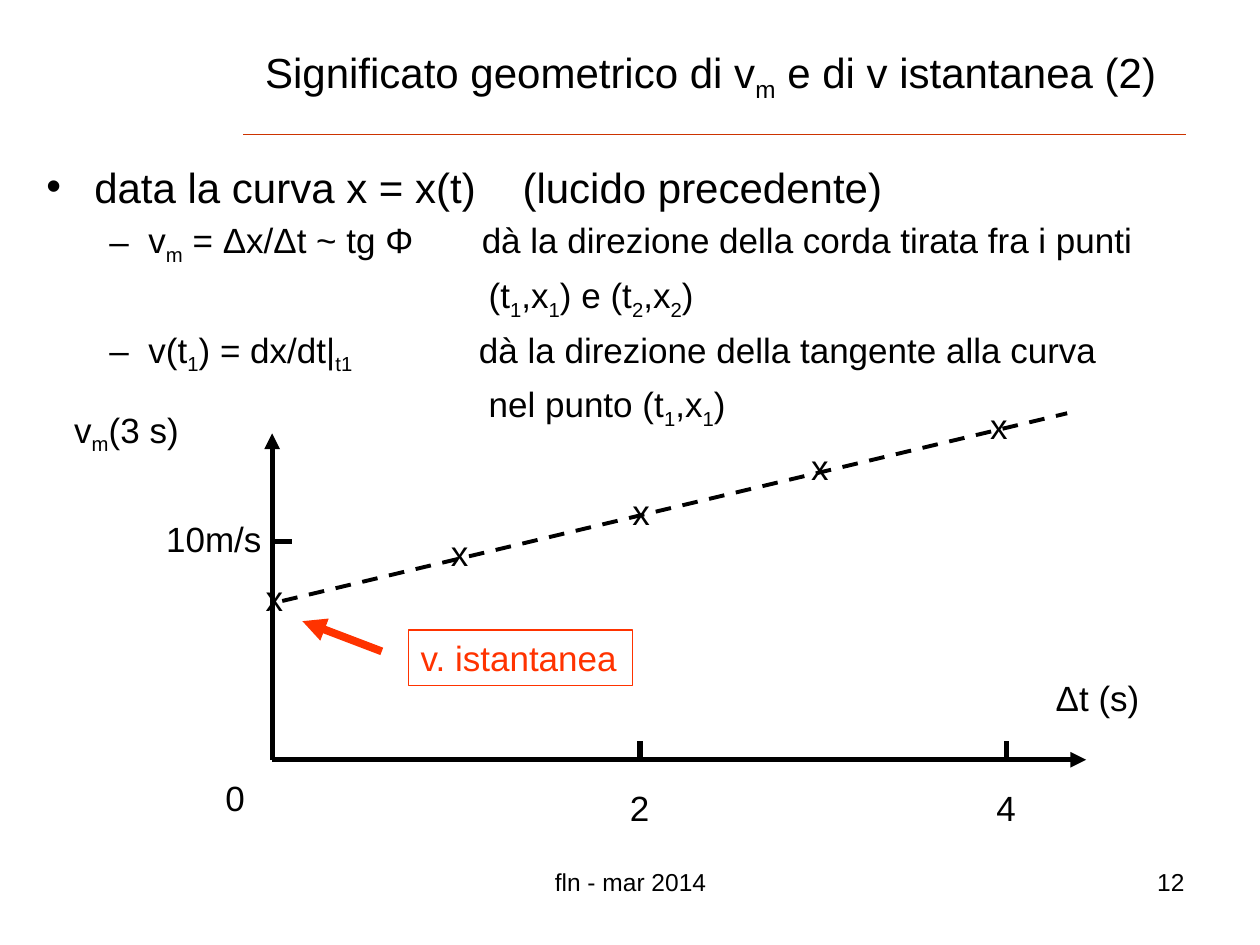
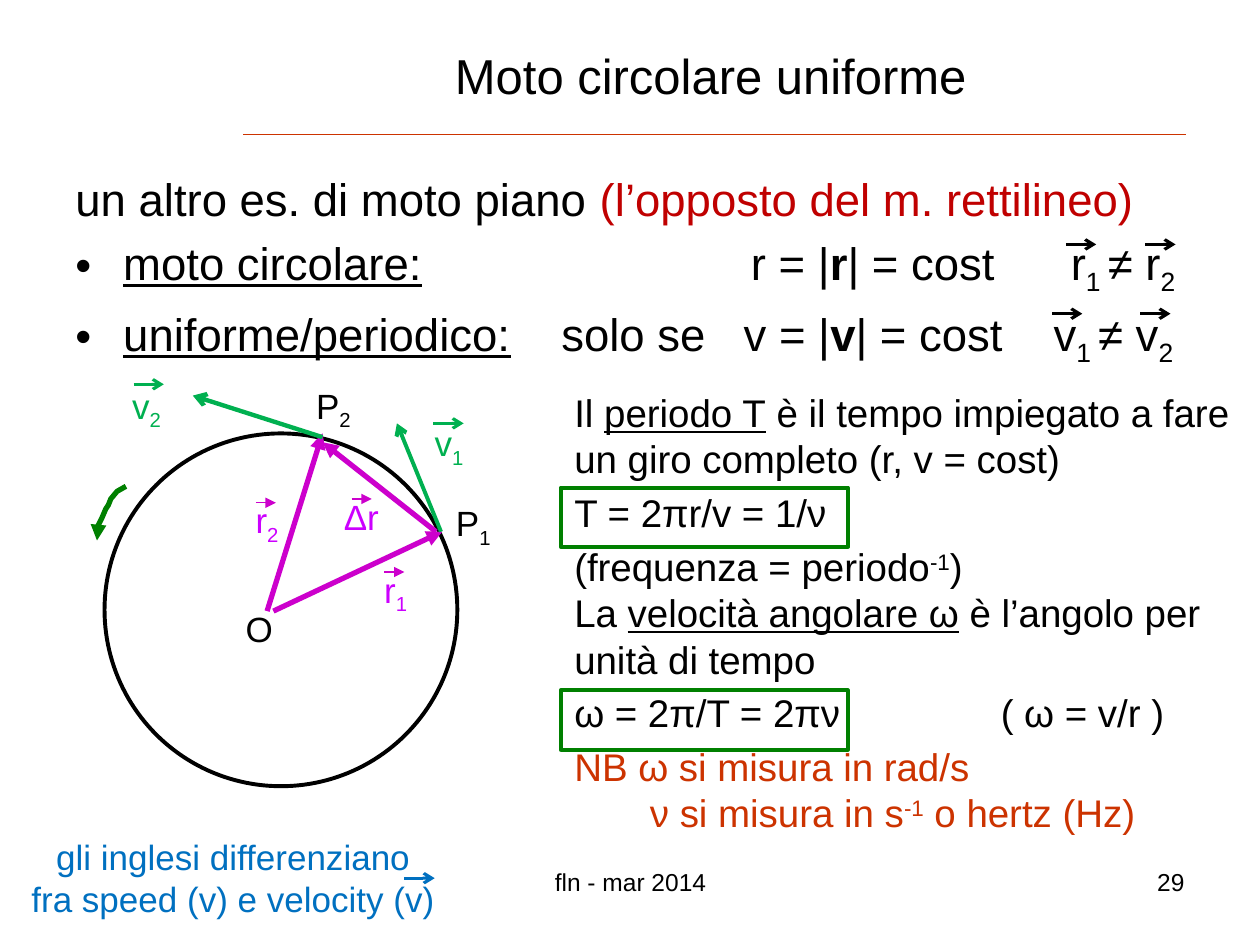
from dataclasses import dataclass
from lxml import etree
from pptx import Presentation
from pptx.dml.color import RGBColor
from pptx.enum.dml import MSO_LINE
from pptx.enum.shapes import MSO_CONNECTOR, MSO_SHAPE
from pptx.enum.text import MSO_ANCHOR, MSO_AUTO_SIZE, PP_ALIGN
from pptx.oxml.ns import qn
from pptx.util import Inches, Pt

LEFT, MID, RIGHT = PP_ALIGN.LEFT, PP_ALIGN.CENTER, PP_ALIGN.RIGHT
TOP, CENTRE = MSO_ANCHOR.TOP, MSO_ANCHOR.MIDDLE
GROW, FIXED = MSO_AUTO_SIZE.SHAPE_TO_FIT_TEXT, MSO_AUTO_SIZE.NONE
DASH = MSO_LINE.DASH
OVAL, RECT = MSO_SHAPE.OVAL, MSO_SHAPE.RECTANGLE
STRAIGHT = MSO_CONNECTOR.STRAIGHT


@dataclass(frozen=True)
class Theme:
    font: str = "Arial"
    black: str = "000000"
    rule: str = "CC3300"
    red: str = "C00000"
    hot: str = "FF3300"
    plum: str = "CC00CC"
    pink: str = "CC00FF"
    green: str = "008000"
    leaf: str = "00B050"
    blue: str = "0070C0"
    foot: int = 14
    label: int = 20
    note: int = 22
    lead: int = 24
    body: int = 26
    head: int = 28
    space: float = 0.278  # width of a blank, in ems


T = Theme()


def apply(obj, fmt):
    for key, val in fmt.items():
        setattr(obj, key, val)


def split(text):
    """Yield (mark, words); {_x} low, {^x} high, {ux} underline,
    {*x} bold, {!x} red, {+n} a gap n blanks wide."""
    for part in text.split("{"):
        mark, end, rest = part.partition("}")
        if end:
            yield mark[0], mark[1:]
        else:
            rest = mark
        if rest:
            yield "", rest


class Deck:
    def __init__(self, style):
        self.style = style
        self.prs = Presentation()
        apply(self.prs, {"slide_width": Inches(10), "slide_height": Inches(7.5)})
        self.slide = None

    # Slide frame: title, rule and footer
    def page(self, title, size, number):
        self.slide = self.prs.slides.add_slide(self.prs.slide_layouts[5])
        head = self.slide.shapes.title
        x, y, w, h = map(Inches, (1.85, 0.28, 7.58, 0.63))
        apply(head, {"left": x, "top": y, "width": w, "height": h})
        apply(head.text_frame, {"word_wrap": True, "auto_size": FIXED,
                                "vertical_anchor": CENTRE})
        self.para(head.text_frame.paragraphs[0], title, size=size, align=MID)
        self.line((1.93, 1.07), (9.41, 1.07), self.style.rule, 0.75)
        for box, words, align in (((3.42, 6.83, 3.17, 0.52), "fln - mar 2014", MID),
                                  ((7.17, 6.83, 2.33, 0.52), number, RIGHT)):
            self.text(box, [(words, {"align": align})], size=self.style.foot)

    # Text
    def para(self, p, text, size, color=T.black, align=LEFT, bullet=None,
             left=0, hang=0, before=0, after=0):
        ppr = p._p.get_or_add_pPr()
        ppr.set("marL", str(Inches(left)))
        ppr.set("indent", str(-Inches(hang)))
        if bullet:
            etree.SubElement(ppr, qn("a:buFont")).set("typeface", self.style.font)
            etree.SubElement(ppr, qn("a:buChar")).set("char", bullet)
        apply(p, {"alignment": align, "space_before": Pt(before * size),
                  "space_after": Pt(after * size)})
        for mark, words in split(text):
            run = p.add_run()
            run.text = " " if mark == "+" else words
            apply(run.font, {"name": self.style.font, "size": Pt(size),
                             "bold": mark == "*", "underline": mark == "u"})
            tint = self.style.red if mark == "!" else color
            run.font.color.rgb = RGBColor.from_string(tint)
            rpr = run._r.get_or_add_rPr()
            if mark == "+":
                wide = (int(words) - 1) * self.style.space * size
                rpr.set("spc", str(round(wide * 100)))
            elif mark in ("_", "^"):
                rpr.set("baseline", "-25000" if mark == "_" else "30000")

    def text(self, box, rows, wrap=True, grow=False, **base):
        shape = self.slide.shapes.add_textbox(*map(Inches, box))
        frame = shape.text_frame
        apply(frame, {"word_wrap": wrap, "auto_size": GROW if grow else FIXED,
                      "vertical_anchor": TOP})
        for i, (words, fmt) in enumerate(rows):
            p = frame.add_paragraph() if i else frame.paragraphs[0]
            self.para(p, words, **{**base, **fmt})
        return shape

    def label(self, x, y, w, words, color=T.black, h=0.43):
        return self.text((x, y, w, h), [(words, {})], wrap=False, grow=True,
                         size=self.style.label, color=color)

    # Lines and outlines
    def pen(self, shape, color, width, tip=None, dash=None):
        apply(shape.line, {"width": Pt(width)})
        shape.line.color.rgb = RGBColor.from_string(color)
        if dash:
            shape.line.dash_style = dash
        if tip:
            ln = shape.line._get_or_add_ln()
            etree.SubElement(ln, qn("a:tailEnd")).set("type", tip)

    def line(self, start, end, color, width, tip=None, dash=None):
        link = self.slide.shapes.add_connector(STRAIGHT, *map(Inches, start + end))
        self.pen(link, color, width, tip, dash)
        etree.SubElement(link._element.spPr, qn("a:effectLst"))

    def arrow(self, x, y, size, color, width, tip):
        self.line((x, y), (x + size, y), color, width, tip)

    def shape(self, kind, box, color, width):
        form = self.slide.shapes.add_shape(kind, *map(Inches, box))
        form.shadow.inherit = False
        form.fill.background()
        self.pen(form, color, width)

    def curve(self, dots, color, width, tip):
        dots = [(Inches(x), Inches(y)) for x, y in dots]
        path = self.slide.shapes.build_freeform(*dots[0])
        path.add_line_segments(dots[1:], close=False)
        form = path.convert_to_shape()
        form.shadow.inherit = False
        form.fill.background()
        self.pen(form, color, width, tip)


def chord(deck):
    deck.page("Significato geometrico di v{_m} e di v istantanea (2)", T.lead, "12")

    # Bullets
    dash = {"bullet": "–", "left": 0.81, "hang": 0.31, "before": 0.2}
    more = {"left": 3.51, "before": 0.2}
    deck.text((0.27, 1.23, 9.53, 5.47), [
        ("data la curva x = x(t){+4}(lucido precedente)",
         {"size": T.lead, "bullet": "•", "left": 0.38, "hang": 0.38}),
        ("v{_m} = Δx/Δt ~ tg Φ{+7}dà la direzione della corda tirata fra i punti", dash),
        ("(t{_1},x{_1}) e (t{_2},x{_2})", more),
        ("v(t{_1}) = dx/dt|{_t1}{+13}dà la direzione della tangente alla curva", dash),
        ("nel punto (t{_1},x{_1})", more),
    ], size=T.label)

    # Axes and ticks
    zero = (2.16, 6.03)
    for end in ((2.16, 3.44), (8.62, 6.03)):
        deck.line(zero, end, T.black, 3, "triangle")
    deck.line((2.16, 4.3), (2.32, 4.3), T.black, 3)
    for x in (5.08, 7.99):
        deck.line((x, 6.03), (x, 5.88), T.black, 3)
    deck.line((2.24, 4.77), (8.47, 3.28), T.black, 2.25, dash=DASH)
    for spot in ((0.49, 3.19, 1.05, "v{_m}(3 s)"), (1.22, 4.06, 0.96, "10m/s"),
                 (1.69, 6.11, 0.36, "0"), (4.9, 6.19, 0.43, "2"),
                 (7.81, 6.19, 0.36, "4"), (8.28, 5.32, 0.92, "Δt (s)")):
        deck.label(*spot)

    # Data points
    for x, y in ((2.01, 4.53), (3.48, 4.17), (4.92, 3.84), (6.34, 3.49), (7.76, 3.16)):
        deck.label(x, y, 0.34, "x")

    # Callout
    deck.line((3.03, 5.17), (2.4, 4.93), T.hot, 4.5, "triangle")
    deck.pen(deck.label(3.24, 5, 1.78, "v. istantanea", T.hot, 0.44), T.hot, 0.75)


def circle(deck):
    deck.page("Moto circolare uniforme", T.head, "29")

    # Bullets
    dot = {"bullet": "•", "left": 0.38, "hang": 0.38, "before": 0.2}
    deck.text((0.5, 1.31, 9, 5.39), [
        ("un altro es. di moto piano {!(l’opposto del m. rettilineo)}", {}),
        ("{umoto circolare:}{+26}r = |{*r}| = cost{+6}r{_1 }≠ r{_2}", dot),
        ("{uuniforme/periodico:}{+4}solo se{+3}v = |{*v}| = cost{+4}v{_1 }≠ v{_2}", dot),
    ], size=T.body)

    # Circle and radius vectors
    deck.shape(OVAL, (0.83, 3.44, 2.8, 2.8), T.black, 2.25)
    for start, end in (((2.12, 4.85), (2.56, 3.44)), ((2.17, 4.85), (3.51, 4.22)),
                       ((3.46, 4.22), (2.56, 3.51))):
        deck.line(start, end, T.plum, 3, "triangle")
    for x, y, w, words, shift in ((1.93, 3.91, 0.44, "r{_2}", 0.1),
                                  (2.95, 4.46, 0.39, "r{_1}", 0.1),
                                  (2.63, 3.88, 0.48, "Δr", 0.16)):
        deck.label(x, y, w, words, T.pink)
        deck.arrow(x + shift, y + 0.08, 0.16, T.plum, 0.75, "triangle")
    for spot in ((1.85, 4.77, 0.42, "O"), (3.52, 3.93, 0.49, "P{_1}"),
                 (2.41, 3, 0.49, "P{_2}")):
        deck.label(*spot)
    deck.curve([(1, 3.86), (0.93, 3.9), (0.88, 3.96), (0.86, 4.01), (0.84, 4.04),
                (0.81, 4.11), (0.78, 4.17), (0.77, 4.29)], T.green, 3, "triangle")

    # Period and angular speed
    law = {"before": 0.2, "after": 0.2}
    deck.text((4.46, 3.04, 5.54, 3.73), [
        ("Il {uperiodo T} è il tempo impiegato a fare un giro completo (r, v = cost)", {}),
        ("T = 2πr/v = 1/ν", law),
        ("(frequenza = periodo{^-1})", {}),
        ("La {uvelocità angolare ω} è l’angolo per", {}),
        ("unità di tempo", {}),
        ("ω = 2π/T = 2πν{+15}( ω = v/r )", law),
        ("NB ω si misura in rad/s", {"color": T.rule}),
        ("ν si misura in s{^-1} o hertz (Hz)", {"color": T.rule, "left": 0.6}),
    ], grow=True, size=T.note)
    for y in (3.87, 5.48):
        deck.shape(RECT, (4.45, y, 2.28, 0.47), T.green, 2.25)

    # Remark
    deck.text((0.14, 6.58, 3.42, 0.77), [
        ("gli inglesi differenziano", {}), ("fra speed (v) e velocity (v)", {}),
    ], wrap=False, grow=True, size=T.label, color=T.blue, align=MID)

    # Velocity vectors
    deck.line((3.5, 4.22), (3.15, 3.36), T.leaf, 2.25, "arrow")
    deck.line((2.56, 3.47), (1.53, 3.14), T.leaf, 2.5, "arrow")
    deck.label(3.35, 3.3, 0.45, "v{_1}", T.leaf, 0.44)
    deck.label(0.95, 3, 0.45, "v{_2}", T.leaf, 0.44)

    # Arrows over letters
    for x, y, color in ((8.46, 1.94, T.black), (9.09, 1.94, T.black),
                        (8.35, 2.49, T.black), (9.05, 2.49, T.black),
                        (3.44, 3.36, T.leaf), (1.06, 3.05, T.leaf),
                        (3.21, 6.97, T.blue)):
        deck.arrow(x, y, 0.24, color, 1.75, "arrow")


def main():
    deck = Deck(T)
    chord(deck)
    circle(deck)
    deck.prs.save("out.pptx")


if __name__ == "__main__":
    main()
